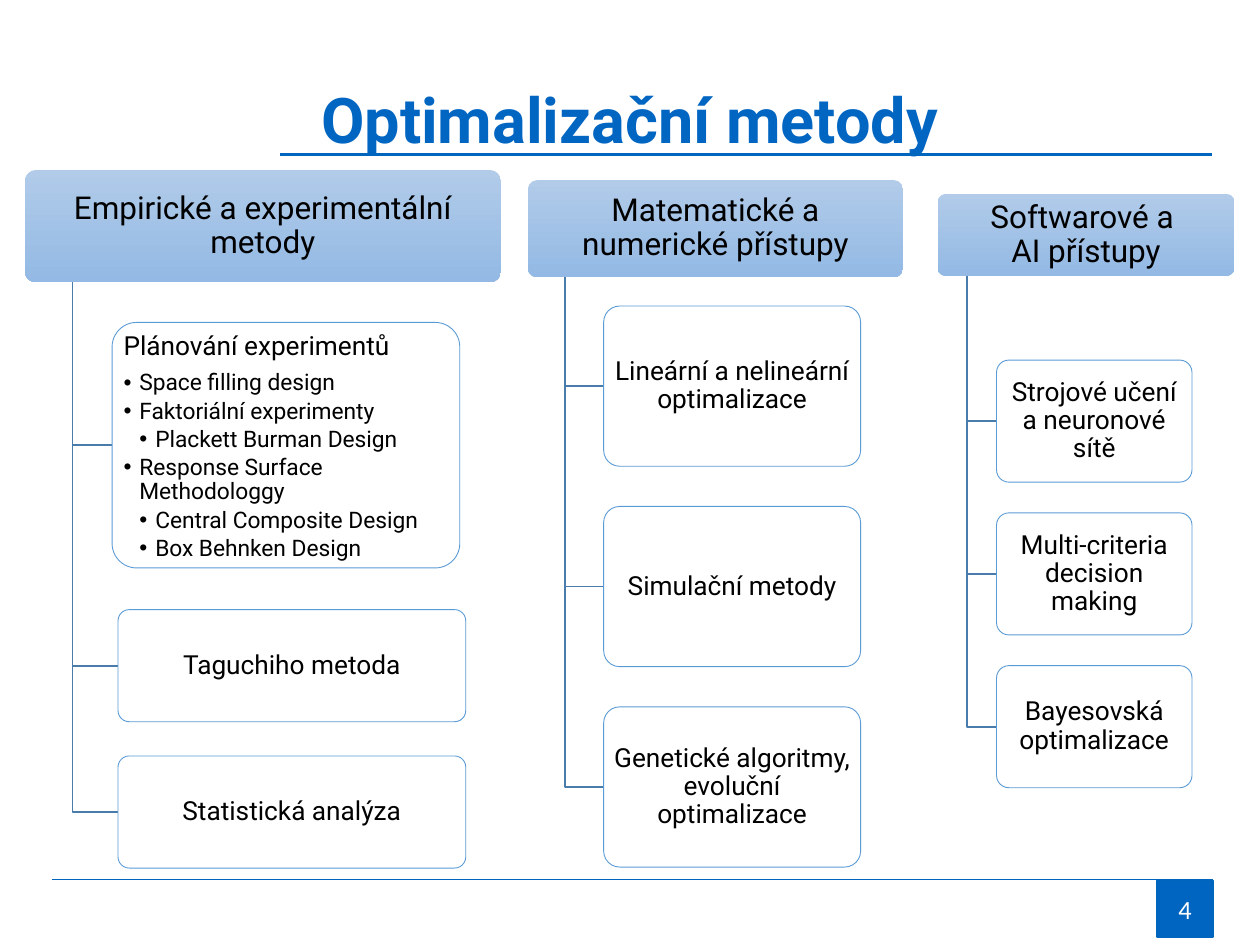
from dataclasses import dataclass
from typing import NamedTuple

from lxml.etree import SubElement
from pptx import Presentation
from pptx.dml.color import RGBColor
from pptx.enum.shapes import MSO_CONNECTOR, MSO_SHAPE
from pptx.enum.text import MSO_ANCHOR as Anchor, MSO_AUTO_SIZE as AutoSize, PP_ALIGN as Align
from pptx.oxml.ns import qn
from pptx.util import Cm, Pt


@dataclass(frozen=True)
class Theme:
    rule: RGBColor = RGBColor(0x00, 0x65, 0xBD)
    badge: RGBColor = RGBColor(0x00, 0x65, 0xC0)
    title: RGBColor = RGBColor(0x01, 0x65, 0xC2)
    head_top: RGBColor = RGBColor(0xB1, 0xCB, 0xE9)
    head_bottom: RGBColor = RGBColor(0x93, 0xB9, 0xE4)
    branch: RGBColor = RGBColor(0x49, 0x7C, 0xAB)
    card_edge: RGBColor = RGBColor(0x5B, 0x9B, 0xD5)
    white: RGBColor = RGBColor(0xFF, 0xFF, 0xFF)
    ink: RGBColor = RGBColor(0x00, 0x00, 0x00)
    font: str = "Roboto"
    number_font: str = "Calibri"
    title_size: float = 36
    head_size: float = 18
    card_size: float = 15
    list_size: float = 13


class Box(NamedTuple):
    """Left, top, width and height in centimetres."""
    left: float
    top: float
    width: float
    height: float

    def lengths(self) -> tuple:
        return tuple(Cm(side) for side in self)


class Card(NamedTuple):
    text: str
    box: Box


class Branch(NamedTuple):
    heading: str
    box: Box
    cards: list


class ListItem(NamedTuple):
    text: str
    level: int


THEME = Theme()


def card_stack(first: Box, pitch: float, texts: list) -> list:
    return [Card(text, first._replace(top=first.top + i * pitch)) for i, text in enumerate(texts)]


PLANNING = Box(2.26, 6.5, 7.01, 4.95)
BRANCHES = [
    Branch("Matematické a numerické přístupy", Box(10.64, 3.63, 7.57, 1.96),
           card_stack(Box(12.17, 6.17, 5.18, 3.23), 4.04,
                      ["Lineární a nelineární optimalizace", "Simulační metody",
                       "Genetické algoritmy, evoluční optimalizace"])),
    Branch("Empirické a experimentální metody", Box(0.5, 3.43, 9.6, 2.26),
           [Card("", PLANNING)] + card_stack(Box(2.38, 12.29, 7.01, 2.26), 2.95,
                                             ["Taguchiho metoda", "Statistická analýza"])),
    Branch("Softwarové a \vAI přístupy", Box(18.9, 3.91, 5.99, 1.65),
           card_stack(Box(20.09, 7.26, 3.94, 2.46), 3.08,
                      ["Strojové učení a neuronové sítě", "Multi-criteria decision making",
                       "Bayesovská optimalizace"])),
]
PLANNING_LIST = [
    ListItem("Plánování experimentů", 0),
    ListItem("Space filling design", 1),
    ListItem("Faktoriální experimenty", 1),
    ListItem("Plackett Burman Design", 2),
    ListItem("Response Surface Methodologgy", 1),
    ListItem("Central Composite Design", 2),
    ListItem("Box Behnken Design", 2),
]


def style_font(paragraph, size: float, color: RGBColor, name: str = THEME.font) -> None:
    font = paragraph.font
    font.name, font.size, font.color.rgb = name, Pt(size), color


def set_margins(frame, side: float, end: float) -> None:
    frame.margin_left = frame.margin_right = Cm(side)
    frame.margin_top = frame.margin_bottom = Cm(end)


def add_rule(slide, left: float, right: float, y: float, width: float) -> None:
    rule = slide.shapes.add_connector(MSO_CONNECTOR.STRAIGHT, Cm(left), Cm(y), Cm(right), Cm(y))
    rule.line.color.rgb, rule.line.width = THEME.rule, Pt(width)
    SubElement(rule.element.spPr, qn("a:effectLst"))


def add_panel(slide, box: Box, text: str, size: float, margin: float):
    panel = slide.shapes.add_shape(MSO_SHAPE.ROUNDED_RECTANGLE, *box.lengths())
    panel.adjustments[0] = 0.1
    panel.shadow.inherit = False
    frame = panel.text_frame
    frame.word_wrap = True
    frame.vertical_anchor = Anchor.MIDDLE
    set_margins(frame, margin, margin * 0.7)
    if text:
        label = frame.paragraphs[0]
        label.text = text
        label.alignment, label.line_spacing = Align.CENTER, 0.9
        style_font(label, size, THEME.ink)
    return panel


def add_heading(slide, branch: Branch) -> None:
    heading = add_panel(slide, branch.box, branch.heading, THEME.head_size, 0.1)
    heading.fill.gradient()
    heading.fill.gradient_angle = 270
    for stop, color in zip(heading.fill.gradient_stops, (THEME.head_top, THEME.head_bottom)):
        stop.color.rgb = color
    heading.line.fill.background()


def add_elbow(slide, head: Box, card: Box) -> None:
    trunk = Cm(head.left + head.width / 10)
    middle = Cm(card.top + card.height / 2)
    builder = slide.shapes.build_freeform(trunk, Cm(head.top + head.height))
    builder.add_line_segments([(trunk, middle), (Cm(card.left), middle)], close=False)
    elbow = builder.convert_to_shape()
    elbow.fill.background()
    elbow.line.color.rgb, elbow.line.width = THEME.branch, Pt(1)
    elbow.shadow.inherit = False


def add_card(slide, card: Card):
    panel = add_panel(slide, card.box, card.text, THEME.card_size, 0.08)
    panel.fill.solid()
    panel.fill.fore_color.rgb = THEME.white
    panel.line.color.rgb, panel.line.width = THEME.card_edge, Pt(0.5)
    return panel


def fill_list(body, box: Box, items: list) -> None:
    inset = 0.15
    body.left, body.top, body.width, body.height = Box(
        box.left + inset, box.top + inset, box.width - 2 * inset, box.height - 2 * inset).lengths()
    frame = body.text_frame
    frame.auto_size, frame.vertical_anchor, frame.word_wrap = AutoSize.NONE, Anchor.TOP, True
    set_margins(frame, 0.08, 0.05)
    for i, item in enumerate(items):
        line = frame.add_paragraph() if i else frame.paragraphs[0]
        line.text, line.level = item.text, item.level
        props = line._p.get_or_add_pPr()
        props.set("marL", str(Cm(0.32 * item.level)))
        props.set("indent", str(Cm(-0.32) if item.level else 0))
        if item.level:
            SubElement(props, qn("a:buChar"), char="•")
        else:
            SubElement(props, qn("a:buNone"))
        line.alignment, line.line_spacing = Align.LEFT, 0.9
        line.space_before, line.space_after = Pt(0), Pt(2 if item.level else 6)
        style_font(line, THEME.list_size if item.level else THEME.card_size, THEME.ink)


def set_title(title, text: str) -> None:
    title.left, title.top, title.width, title.height = Box(6.22, 0.74, 18.47, 1.88).lengths()
    frame = title.text_frame
    frame.auto_size, frame.vertical_anchor = AutoSize.NONE, Anchor.TOP
    heading = frame.paragraphs[0]
    heading.text = text
    heading.alignment, heading.line_spacing = Align.LEFT, 1.5
    style_font(heading, THEME.title_size, THEME.title)
    heading.font.bold = True


def add_page_number(slide, number: str) -> None:
    badge = slide.shapes.add_shape(MSO_SHAPE.RECTANGLE, *Box(23.32, 17.75, 1.14, 1.14).lengths())
    badge.shadow.inherit = False
    badge.fill.solid()
    badge.fill.fore_color.rgb = THEME.badge
    badge.line.color.rgb, badge.line.width = THEME.rule, Pt(1)
    badge.text_frame.vertical_anchor = Anchor.MIDDLE
    label = badge.text_frame.paragraphs[0]
    label.text, label.alignment = number, Align.CENTER
    style_font(label, THEME.card_size, THEME.white, THEME.number_font)


def main() -> None:
    deck = Presentation()
    deck.slide_width, deck.slide_height = Cm(25.4), Cm(19.05)
    slide = deck.slides.add_slide(deck.slide_layouts[1])
    planning_body = slide.placeholders[1]

    # Title, rules and page number
    add_rule(slide, 5.64, 24.43, 3.12, 1.5)
    add_rule(slide, 1.04, 24.46, 17.73, 1)
    add_page_number(slide, "4")
    set_title(slide.shapes.title, "Optimalizační metody")

    # Three branches of methods
    for branch in BRANCHES:
        add_heading(slide, branch)
        for card in branch.cards:
            add_elbow(slide, branch.box, card.box)
            panel = add_card(slide, card)
            if card.box == PLANNING:
                # The list lies directly on top of its card
                panel.element.addnext(planning_body.element)
    fill_list(planning_body, PLANNING, PLANNING_LIST)

    deck.save("out.pptx")


if __name__ == "__main__":
    main()
